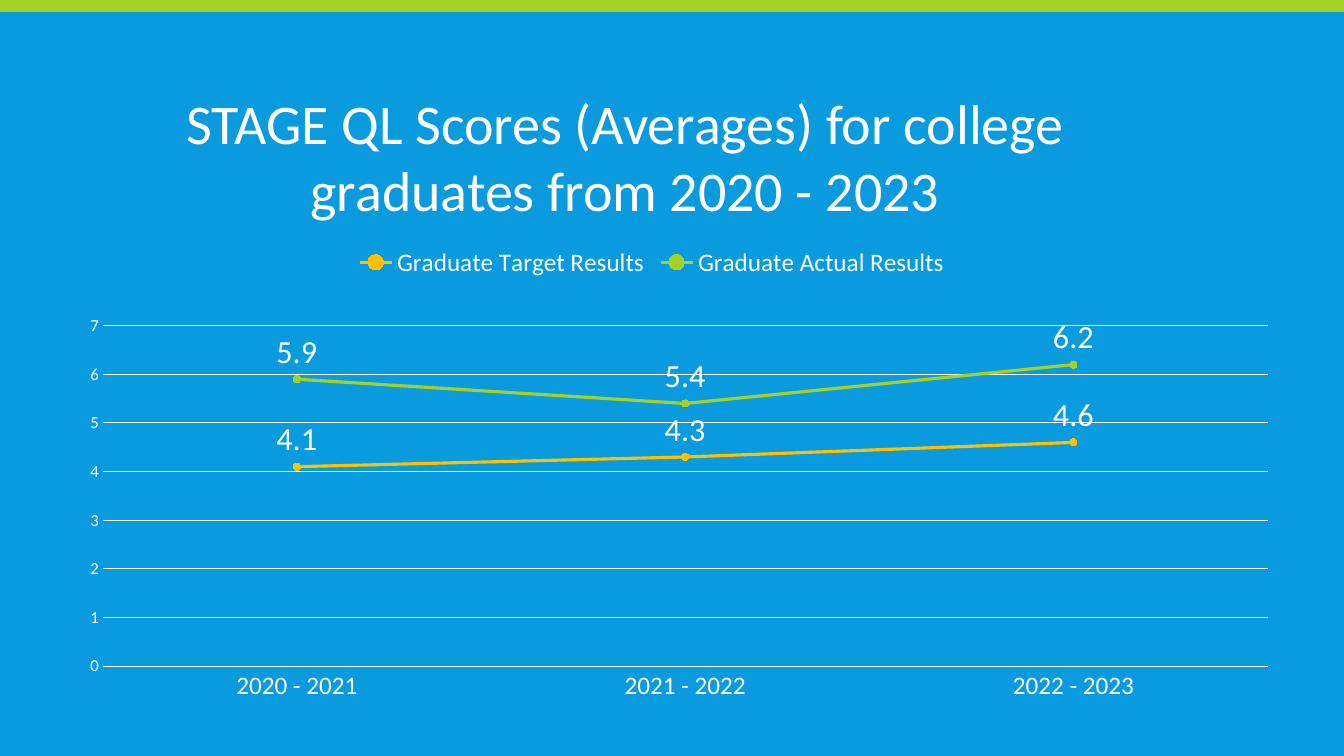
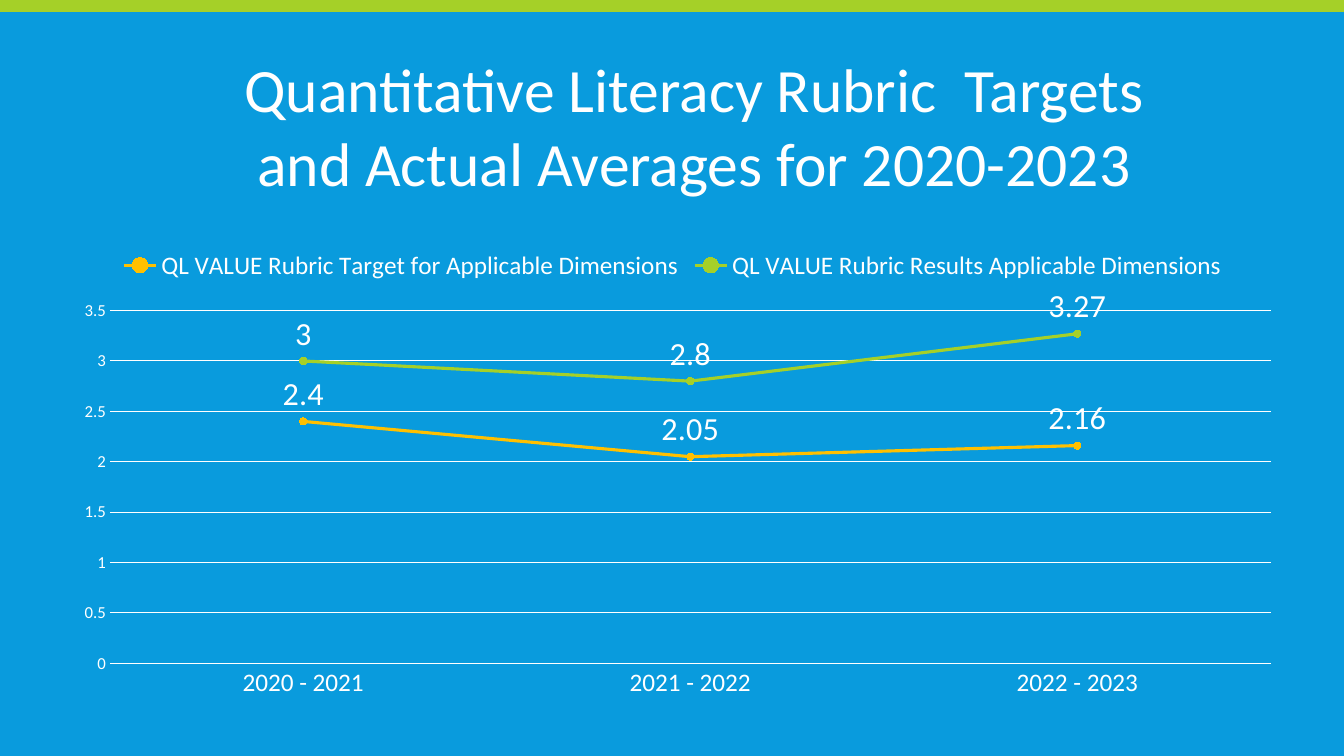
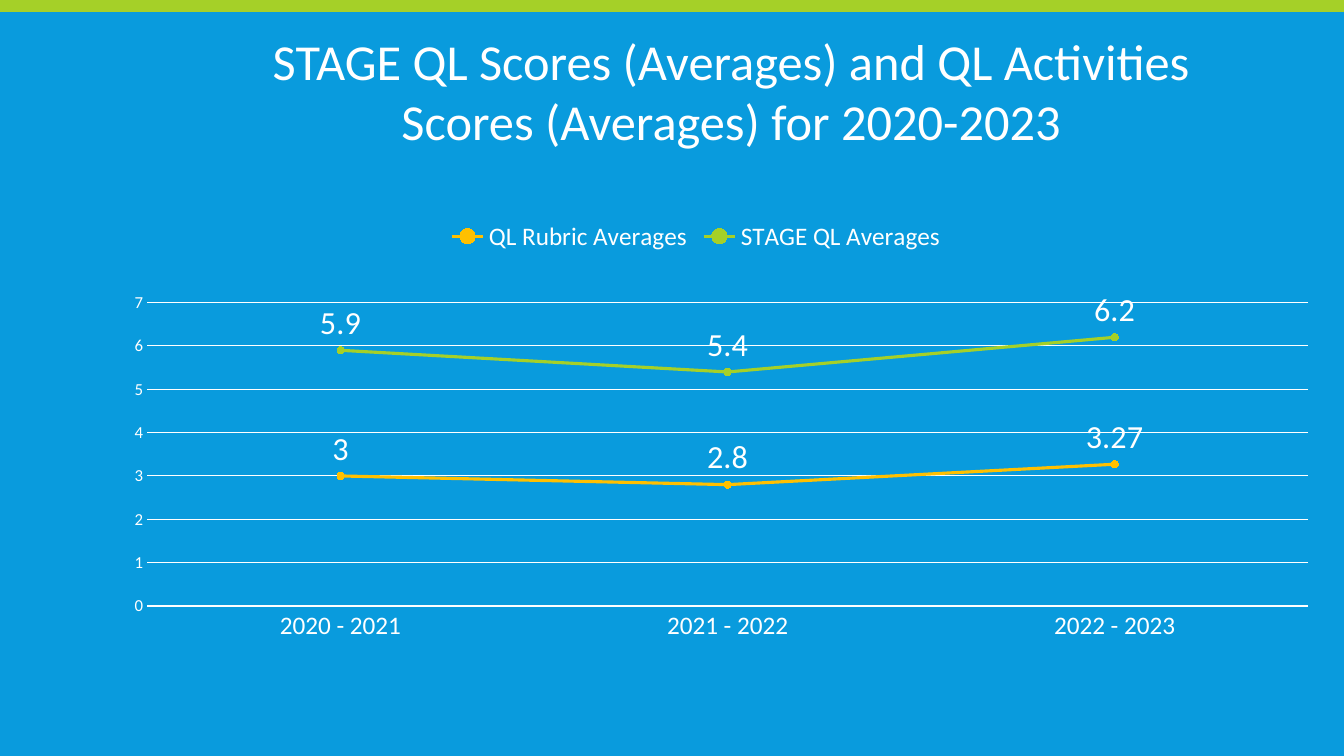
from pptx import Presentation
from pptx.chart.data import CategoryChartData
from pptx.dml.color import RGBColor
from pptx.enum.chart import (XL_CHART_TYPE, XL_LABEL_POSITION,
                             XL_LEGEND_POSITION, XL_MARKER_STYLE,
                             XL_TICK_MARK)
from pptx.enum.shapes import MSO_SHAPE
from pptx.enum.text import MSO_ANCHOR, MSO_AUTO_SIZE, PP_ALIGN
from pptx.oxml import parse_xml
from pptx.oxml.ns import nsdecls
from pptx.util import Cm, Pt

LINE = XL_CHART_TYPE.LINE_MARKERS
ABOVE = XL_LABEL_POSITION.ABOVE
TOP = XL_LEGEND_POSITION.TOP
CIRCLE = XL_MARKER_STYLE.CIRCLE
NO_TICK = XL_TICK_MARK.NONE
RECT = MSO_SHAPE.RECTANGLE
MIDDLE = MSO_ANCHOR.MIDDLE
FIXED = MSO_AUTO_SIZE.NONE
CENTER = PP_ALIGN.CENTER

FONT = "Calibri"
BLUE, GREEN, GOLD, WHITE = "099BDD", "A5D028", "FFC000", "FFFFFF"
WIDE, HIGH = 33.87, 19.05
YEARS = ["2020 - 2021", "2021 - 2022", "2022 - 2023"]
STAGE = (5.9, 5.4, 6.2)
RUBRIC = (3, 2.8, 3.27)

PAGES = [
    {"title": "STAGE QL Scores (Averages) for college graduates "
              "from 2020 - 2023",
     "size": 40, "head": (3.55, 1.92), "box": (1.52, 1.47, 30.58, 17.15),
     "key": (0.24, 0.27), "plot": 0.5, "top": 7, "step": 1,
     "rows": [("Graduate Target Results", (4.1, 4.3, 4.6)),
              ("Graduate Actual Results", STAGE)]},
    {"title": "Quantitative Literacy Rubric  Targets and Actual Averages "
              "for 2020-2023",
     "size": 44, "head": (5.3, 1.15), "box": (1.7, 0.84, 30.48, 17.78),
     "key": (0.04, 0.3), "plot": 0.5, "top": 3.5, "step": 0.5,
     "rows": [("QL VALUE Rubric Target for Applicable Dimensions",
               (2.4, 2.05, 2.16)),
              ("QL VALUE Rubric Results Applicable Dimensions", RUBRIC)]},
    {"title": "STAGE QL Scores (Averages) and QL Activities Scores "
              "(Averages) for 2020-2023",
     "size": 36, "head": (6.23, 0.27), "box": (2.64, 0.64, 30.48, 17.78),
     "key": (0.28, 0.27), "plot": 0.43, "top": 7, "step": 1,
     "rows": [("QL Rubric Averages", RUBRIC),
              ("STAGE QL Averages", STAGE)]},
]


def color(code):
    """Turn a hex string into a colour."""
    return RGBColor.from_string(code)


def paint(fill, code):
    """Make a fill solid."""
    fill.solid()
    fill.fore_color.rgb = color(code)


def stroke(line, code, width):
    """Set the colour and width of a line."""
    paint(line.fill, code)
    line.width = Pt(width)


def style(font, size):
    """Set the shared face and colour at one size."""
    font.name = FONT
    font.size = Pt(size)
    font.bold = False
    font.color.rgb = color(WHITE)


def dress(master, slide):
    """Give the master its background and top band."""
    paint(master.background.fill, BLUE)
    band = slide.shapes.add_shape(RECT, 0, 0, Cm(WIDE), Cm(0.3))
    band.shadow.inherit = False
    paint(band.fill, GREEN)
    band.line.fill.background()
    master.shapes.element.insert(2, band.element)


def add_title(slide, text, size, left, top):
    """Place and fill the title placeholder."""
    title = slide.shapes.title
    title.left, title.top = Cm(left), Cm(top)
    title.width, title.height = Cm(24.4), Cm(4)
    frame = title.text_frame
    frame.margin_left = frame.margin_right = 0
    frame.margin_top = frame.margin_bottom = 0
    frame.word_wrap, frame.auto_size = True, FIXED
    frame.vertical_anchor = MIDDLE
    para = frame.paragraphs[0]
    para.alignment = CENTER
    run = para.add_run()
    run.text = text
    style(run.font, size)


def set_layout(node, index, inner, **parts):
    """Fix the place of a chart part by fractions of the chart."""
    for old in node.xpath("c:layout"):
        node.remove(old)
    target = '<c:layoutTarget val="inner"/>' if inner else ""
    modes = "".join(f'<c:{name}Mode val="edge"/>' for name in "xy")
    sizes = "".join(f'<c:{name} val="{val}"/>' for name, val in parts.items())
    node.insert(index, parse_xml(
        f'<c:layout {nsdecls("c")}><c:manualLayout>{target}{modes}{sizes}'
        '</c:manualLayout></c:layout>'))


def set_axes(chart, top, step):
    """Format both axes and the grid."""
    cat, val = chart.category_axis, chart.value_axis
    for axis, size in ((cat, 18), (val, 12)):
        axis.major_tick_mark = axis.minor_tick_mark = NO_TICK
        style(axis.tick_labels.font, size)
    stroke(cat.format.line, WHITE, 0.75)
    val.format.line.fill.background()
    val.has_major_gridlines = True
    stroke(val.major_gridlines.format.line, WHITE, 0.75)
    val.minimum_scale, val.maximum_scale = 0, top
    val.major_unit = step
    val.tick_labels.number_format = "General"
    val.tick_labels.number_format_is_linked = False


def set_row(row, code):
    """Format one series with its markers and labels."""
    row.smooth = False
    stroke(row.format.line, code, 2.25)
    row.marker.style, row.marker.size = CIRCLE, 5
    paint(row.marker.format.fill, code)
    stroke(row.marker.format.line, code, 0.75)
    labels = row.data_labels
    labels.show_value = True
    labels.position = ABOVE
    style(labels.font, 23)


def add_graph(slide, page):
    """Add the line chart of one page."""
    data = CategoryChartData()
    data.categories = YEARS
    for name, vals in page["rows"]:
        data.add_series(name, vals)
    box = [Cm(part) for part in page["box"]]
    chart = slide.shapes.add_chart(LINE, *box, data).chart
    style(chart.font, 10)
    chart.has_title = False
    chart.has_legend = True
    chart.legend.position = TOP
    chart.legend.include_in_layout = False
    style(chart.legend.font, 18)
    set_axes(chart, page["top"], page["step"])
    chart.plots[0].vary_by_categories = False
    for row, code in zip(chart.series, (GOLD, GREEN)):
        set_row(row, code)
    area, = chart.element.xpath("c:chart/c:plotArea")
    set_layout(area, 0, True, x=0.035, y=0.393, w=0.96, h=page["plot"])
    key, = chart.element.xpath("c:chart/c:legend")
    left, top = page["key"]
    set_layout(key, 1, False, x=left, y=top)


def main():
    """Build and save the deck."""
    deck = Presentation()
    deck.slide_width, deck.slide_height = Cm(WIDE), Cm(HIGH)
    for page in PAGES:
        slide = deck.slides.add_slide(deck.slide_layouts[5])
        add_title(slide, page["title"], page["size"], *page["head"])
        add_graph(slide, page)
    dress(deck.slide_master, deck.slides[0])
    deck.save("out.pptx")


if __name__ == "__main__":
    main()
